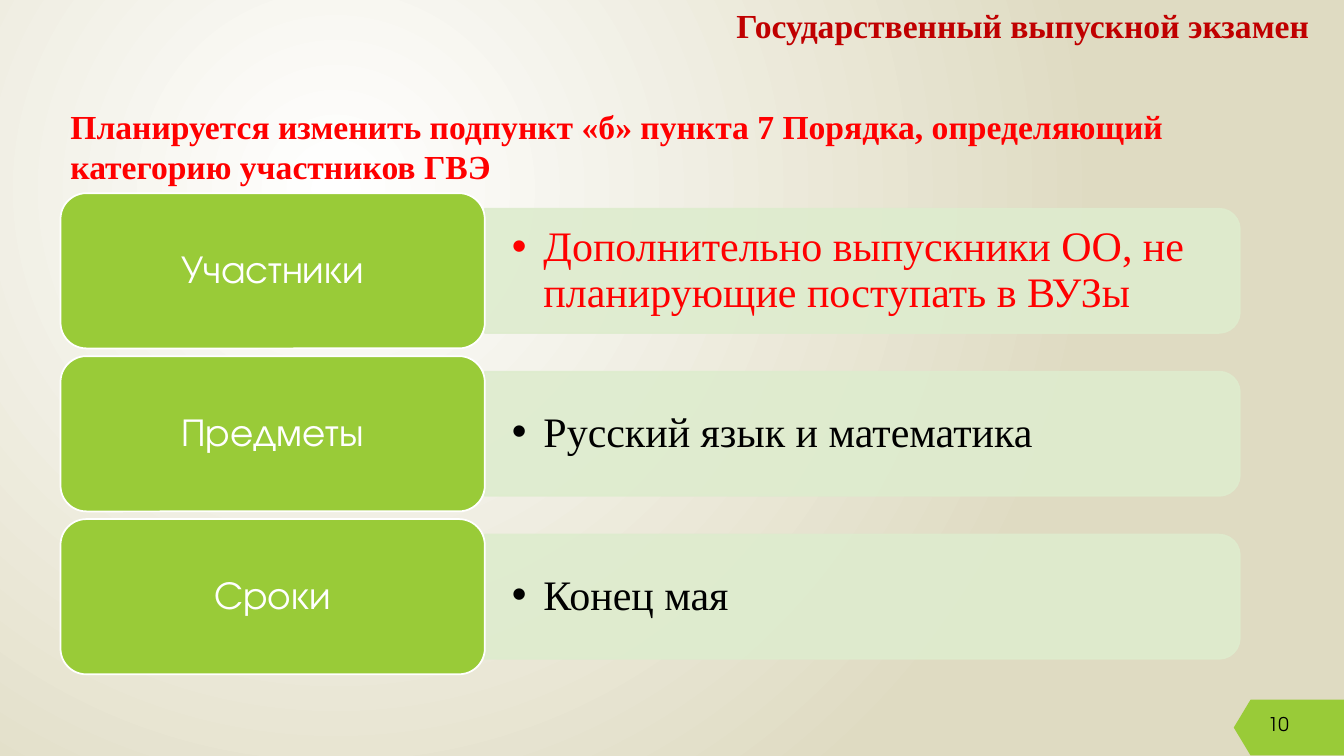
from dataclasses import dataclass

from lxml import etree
from pptx import Presentation
from pptx.dml.color import RGBColor
from pptx.enum.shapes import MSO_SHAPE
from pptx.enum.text import MSO_ANCHOR, MSO_AUTO_SIZE, PP_ALIGN
from pptx.oxml.ns import qn
from pptx.util import Pt

ROUND = MSO_SHAPE.ROUNDED_RECTANGLE
HALF = MSO_SHAPE.ROUND_2_SAME_RECTANGLE
TOP, MIDDLE = MSO_ANCHOR.TOP, MSO_ANCHOR.MIDDLE
LEFT, CENTER = PP_ALIGN.LEFT, PP_ALIGN.CENTER
FIXED = MSO_AUTO_SIZE.NONE


@dataclass(frozen=True)
class Theme:
    serif: str = "Times New Roman"
    sans: str = "TeX Gyre Adventor"
    white: str = "FFFFFF"
    black: str = "000000"
    sand: str = "DFDBC2"
    green: str = "99CB38"
    pale: str = "DEECCE"
    red: str = "FF0000"
    dark: str = "C00000"
    head: float = 24
    label: float = 28
    body: float = 30
    page: float = 13.5
    line: float = 1.25


THEME = Theme()
ROWS = [
    ("Участники", "Дополнительно выпускники ОО, не планирующие поступать в ВУЗы", THEME.red),
    ("Предметы", "Русский язык и математика", THEME.black),
    ("Сроки", "Конец мая", THEME.black),
]


def rgb(code):
    return RGBColor.from_string(code)


def place(box):
    return [Pt(n) for n in box]


def write(shape, text, size, color, face, bold=False, align=LEFT,
          anchor=TOP, pad=(7.2, 3.6), space=None, bullet=None):
    frame = shape.text_frame
    frame.word_wrap = True
    frame.auto_size = FIXED
    frame.vertical_anchor = anchor
    frame.margin_left = frame.margin_right = Pt(pad[0])
    frame.margin_top = frame.margin_bottom = Pt(pad[1])
    frame.text = text
    para = frame.paragraphs[0]
    para.alignment = align
    if space:
        para.line_spacing = space
    if bullet:
        props = para._p.get_or_add_pPr()
        props.set("marL", str(Pt(bullet)))
        props.set("indent", str(-Pt(bullet)))
        etree.SubElement(props, qn("a:buFont")).set("typeface", "Arial")
        etree.SubElement(props, qn("a:buChar")).set("char", "•")
    font = para.font
    font.name, font.size, font.bold = face, Pt(size), bold
    font.color.rgb = rgb(color)


def paint(shape, fill, line=None):
    shape.shadow.inherit = False
    shape.fill.solid()
    shape.fill.fore_color.rgb = rgb(fill)
    if line:
        shape.line.color.rgb = rgb(line)
        shape.line.width = Pt(THEME.line)
    else:
        shape.line.fill.background()


def fade(shape, share):
    for color in shape.element.spPr.iter(qn("a:srgbClr")):
        etree.SubElement(color, qn("a:alpha")).set("val", str(share * 1000))


def backdrop(slide):
    fill = slide.background.fill
    fill.gradient()
    for stop, color in zip(fill.gradient_stops, (THEME.white, THEME.sand)):
        stop.color.rgb = rgb(color)
    grad = next(slide.element.iter(qn("a:gradFill")))
    for lin in grad.findall(qn("a:lin")):
        grad.remove(lin)
    glow = etree.Element(qn("a:path"), {"path": "circle"})
    rect = etree.SubElement(glow, qn("a:fillToRect"))
    for side, val in zip("ltrb", (50, 50, 100, 100)):
        rect.set(side, str(val * 1000))
    grad.find(qn("a:gsLst")).addnext(glow)


def heading(slide, box):
    title = slide.shapes.title
    title.left, title.top, title.width, title.height = place(box)
    write(title, "Государственный выпускной экзамен", THEME.head, THEME.dark,
          THEME.serif, bold=True, align=CENTER)


def intro(slide, box):
    note = slide.shapes.add_textbox(*place(box))
    write(note, "Планируется изменить подпункт «б» пункта 7 Порядка, "
          "определяющий категорию участников ГВЭ",
          THEME.head, THEME.red, THEME.serif, bold=True)


def row(slide, box, label, text, color):
    x, y, wide, high = box
    tab = 303.1
    span, deep = wide - tab, high * 0.8
    mid = y + high / 2
    bar = slide.shapes.add_shape(HALF, *place(
        (x + tab + (span - deep) / 2, mid - span / 2, deep, span)))
    bar.rotation = 90
    paint(bar, THEME.pale, THEME.pale)
    fade(bar, 90)
    body = slide.shapes.add_textbox(*place((x + tab, mid - 40, span - 4.3, 80)))
    write(body, text, THEME.body, color, THEME.serif, anchor=MIDDLE,
          pad=(19.4, 10.1), space=0.9, bullet=22.5)
    tile = slide.shapes.add_shape(ROUND, *place((x, y, tab, high)))
    paint(tile, THEME.green, THEME.white)
    write(tile, label, THEME.label, THEME.white, THEME.sans, align=CENTER,
          anchor=MIDDLE, pad=(14, 9.7), space=0.9)


def rows(slide, box):
    x, y, wide, high = box
    tall = 110.9
    step = (high - tall) / (len(ROWS) - 1)
    for i, item in enumerate(ROWS):
        row(slide, (x, y + i * step, wide, tall), *item)


def badge(slide, box):
    x, y, wide, high = box
    end, low, nose = x + wide, y + high, x + 12
    pen = slide.shapes.build_freeform(Pt(x), Pt(y + high / 2))
    pen.add_line_segments([(Pt(a), Pt(b)) for a, b in (
        (nose, y), (end, y), (end, low), (nose, low))])
    paint(pen.convert_to_shape(), THEME.green)
    page = slide.shapes.add_textbox(*place((x + 17.3, y + 5.7, wide - 17.3, 28.8)))
    write(page, "10", THEME.page, THEME.black, THEME.sans)


def main():
    deck = Presentation()
    deck.slide_width, deck.slide_height = Pt(960), Pt(540)
    slide = deck.slides.add_slide(deck.slide_layouts[5])
    backdrop(slide)
    badge(slide, (881.3, 499.8, 78.7, 39.8))
    heading(slide, (501, 0, 459, 47.5))
    intro(slide, (43.2, 72, 886.3, 65.5))
    rows(slide, (43.2, 138, 842.4, 343.7))
    deck.save("out.pptx")


if __name__ == "__main__":
    main()
